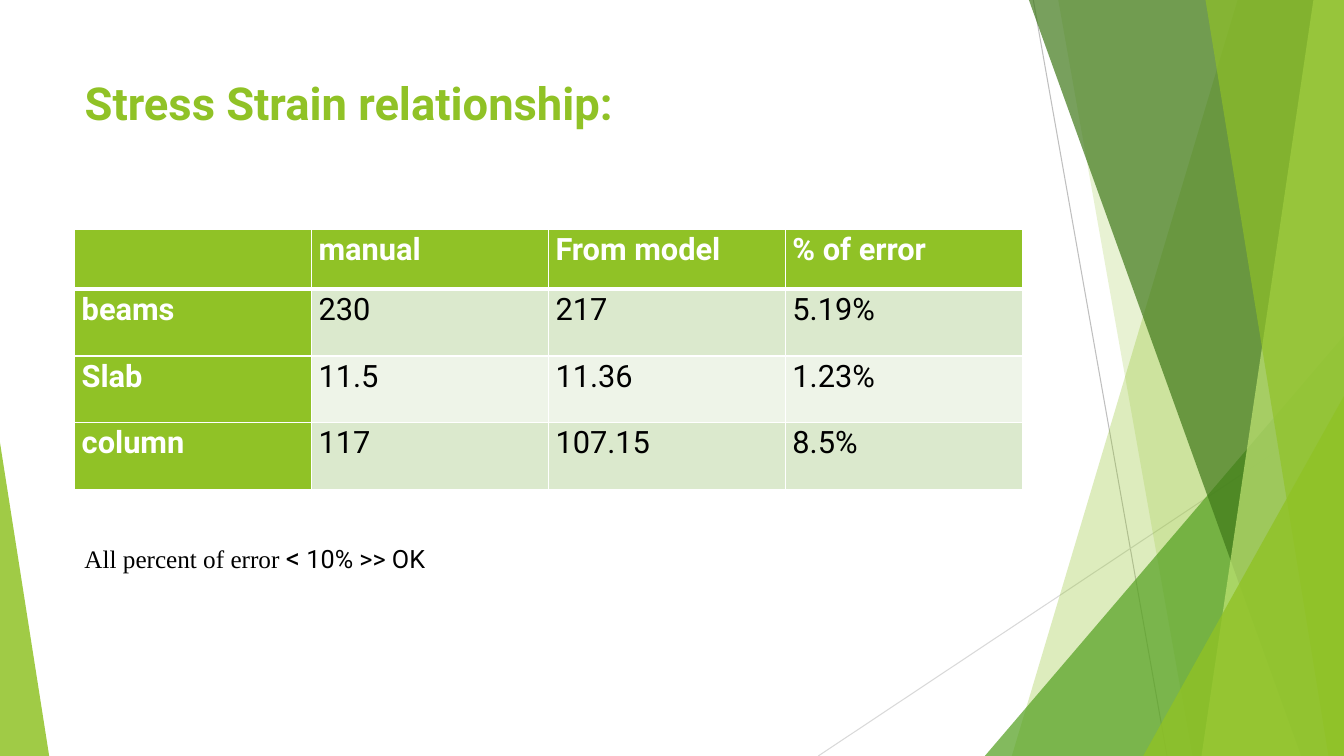
from lxml.etree import SubElement
from pptx import Presentation
from pptx.dml.color import RGBColor
from pptx.enum.shapes import MSO_CONNECTOR as Connector, MSO_SHAPE as Shape
from pptx.enum.text import MSO_ANCHOR as Anchor, MSO_AUTO_SIZE as AutoSize, PP_ALIGN as Align
from pptx.oxml.ns import qn
from pptx.util import Cm, Pt

COLORS = {
    "lime": "90C226", "green": "54A021", "forest": "3F7819", "pale": "C0E474",
    "band_dark": "DBE9CD", "band_light": "EEF4E8",
    "gray": "BFBFBF", "light_gray": "D9D9D9", "white": "FFFFFF", "black": "000000",
}
WIDTH, HEIGHT = 33.87, 19.05
LEFT, CONTENT_WIDTH = 1.88, 23.88

ROWS = [
    ["", "manual", "From model", "% of error"],
    ["beams", "230", "217", "5.19%"],
    ["Slab", "11.5", "11.36", "1.23%"],
    ["column", "117", "107.15", "8.5%"],
]
ROW_HEIGHTS = [1.52, 1.68, 1.68, 1.68]


def write_text(paragraph, text, size=18, font="Roboto", color="black", bold=False):
    run = paragraph.add_run()
    run.text = text
    run.font.size = Pt(size)
    run.font.name = font
    run.font.bold = bold
    run.font.color.rgb = RGBColor.from_string(COLORS[color])


class SlideBuilder:
    def __init__(self, presentation):
        self.slide = presentation.slides.add_slide(presentation.slide_layouts[5])
        self.shapes = self.slide.shapes

    def paint(self, shape, color, opacity):
        shape.shadow.inherit = False
        shape.line.fill.background()
        shape.fill.solid()
        shape.fill.fore_color.rgb = RGBColor.from_string(COLORS[color])
        solid = shape.element.spPr.find(qn("a:solidFill"))
        SubElement(solid[0], qn("a:alpha"), val=str(opacity * 1000))

    def line(self, start, end, color):
        points = [Cm(value) for value in start + end]
        connector = self.shapes.add_connector(Connector.STRAIGHT, *points)
        connector.line.width = Pt(0.75)
        connector.line.color.rgb = RGBColor.from_string(COLORS[color])
        SubElement(connector.element.spPr, qn("a:effectLst"))

    def right_edge_panel(self, top_x, bottom_x, color, opacity):
        builder = self.shapes.build_freeform(Cm(top_x), Cm(0))
        corners = [(WIDTH, 0), (WIDTH, HEIGHT), (bottom_x, HEIGHT)]
        builder.add_line_segments([(Cm(x), Cm(y)) for x, y in corners], close=True)
        self.paint(builder.convert_to_shape(), color, opacity)

    def corner_triangle(self, left, top, width, apex, color, opacity):
        shape = self.shapes.add_shape(
            Shape.ISOSCELES_TRIANGLE, Cm(left), Cm(top), Cm(width), Cm(HEIGHT - top))
        shape.adjustments[0] = apex
        self.paint(shape, color, opacity)

    def title(self, text, top, height):
        title = self.shapes.title
        title.left, title.top = Cm(LEFT), Cm(top)
        title.width, title.height = Cm(CONTENT_WIDTH), Cm(height)
        title.text_frame.auto_size = AutoSize.NONE
        title.text_frame.vertical_anchor = Anchor.MIDDLE
        paragraph = title.text_frame.paragraphs[0]
        paragraph.alignment = Align.LEFT
        write_text(paragraph, text, size=32.4, color="lime", bold=True)
        title.element.getparent().append(title.element)

    def cell_borders(self, cell, widths):
        properties = cell._tc.get_or_add_tcPr()
        for side, width in widths.items():
            border = SubElement(properties, qn(f"a:ln{side}"), w=str(Pt(width)))
            solid = SubElement(border, qn("a:solidFill"))
            SubElement(solid, qn("a:srgbClr"), val=COLORS["white"])

    def table(self, rows, top, heights):
        frame = self.shapes.add_table(
            len(rows), len(rows[0]), Cm(LEFT), Cm(top), Cm(CONTENT_WIDTH), Cm(sum(heights)))
        table = frame.table
        for row_index, (values, height) in enumerate(zip(rows, heights)):
            table.rows[row_index].height = Cm(height)
            band = "band_dark" if row_index % 2 else "band_light"
            for column_index, value in enumerate(values):
                cell = table.cell(row_index, column_index)
                heading = row_index == 0 or column_index == 0
                self.cell_borders(cell, {
                    "L": 1, "R": 1,
                    "T": 3 if row_index == 1 else 1,
                    "B": 3 if row_index == 0 else 1,
                })
                cell.fill.solid()
                cell.fill.fore_color.rgb = RGBColor.from_string(
                    COLORS["lime" if heading else band])
                cell.margin_left = cell.margin_right = Cm(0.18)
                cell.margin_top = cell.margin_bottom = Cm(0)
                if value:
                    paragraph = cell.text_frame.paragraphs[0]
                    paragraph.line_spacing = 1.07
                    write_text(paragraph, value, size=22, bold=heading,
                               color="white" if heading else "black")

    def note(self, parts, top, width, height):
        box = self.shapes.add_textbox(Cm(LEFT), Cm(top), Cm(width), Cm(height))
        box.text_frame.word_wrap = True
        box.text_frame.auto_size = AutoSize.SHAPE_TO_FIT_TEXT
        for text, style in parts:
            write_text(box.text_frame.paragraphs[0], text, **style)


def main():
    presentation = Presentation()
    presentation.slide_width, presentation.slide_height = Cm(WIDTH), Cm(HEIGHT)
    builder = SlideBuilder(presentation)

    builder.line((26.04, 0), (29.41, HEIGHT), "gray")
    builder.line((WIDTH, 10.24), (20.62, HEIGHT), "light_gray")
    builder.right_edge_panel(31.19, 25.5, "lime", 30)
    builder.right_edge_panel(26.67, 30.05, "lime", 20)
    builder.corner_triangle(24.82, 8.46, 9.05, 1, "green", 72)
    builder.right_edge_panel(25.93, 32.79, "forest", 70)
    builder.right_edge_panel(33.1, 30.28, "pale", 70)
    builder.right_edge_panel(30.38, 33.48, "lime", 65)
    builder.corner_triangle(28.81, 9.98, 5.06, 1, "lime", 80)
    builder.corner_triangle(0, 11.15, 1.24, 0, "lime", 85)

    builder.title("Stress Strain relationship:", 1.7, 1.78)
    builder.table(ROWS, 5.77, ROW_HEIGHTS)
    builder.note([
        ("All percent of error ", {"font": "Times New Roman"}),
        ("<", {"size": 20}),
        (" 10% >> OK", {}),
    ], 13.49, 12.78, 1.12)

    presentation.save("out.pptx")


if __name__ == "__main__":
    main()
